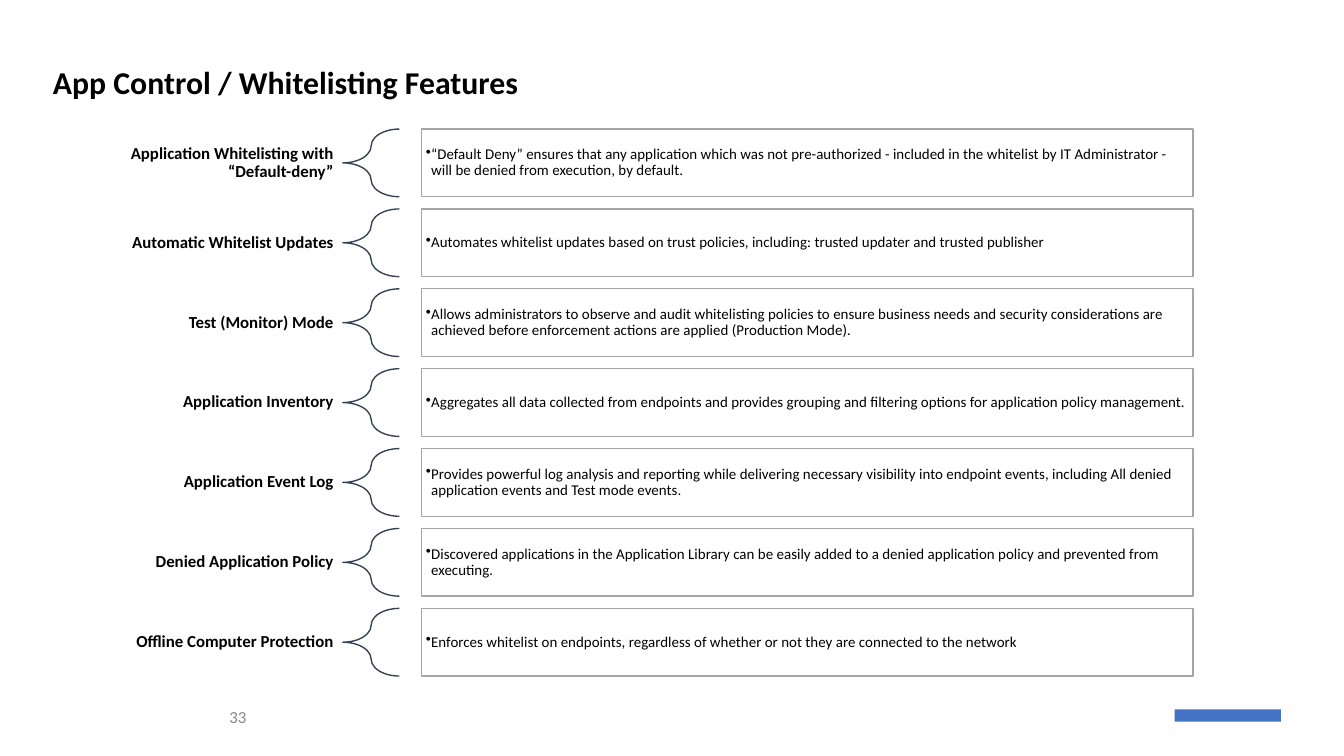
from lxml.etree import SubElement
from pptx import Presentation
from pptx.dml.color import RGBColor
from pptx.enum.shapes import MSO_SHAPE as SHAPE
from pptx.enum.text import MSO_ANCHOR as ANCHOR, MSO_AUTO_SIZE as AUTO, PP_ALIGN as ALIGN
from pptx.oxml.ns import qn
from pptx.util import Cm, Pt

BLACK = RGBColor(0x00, 0x00, 0x00)
WHITE = RGBColor(0xFF, 0xFF, 0xFF)
GRAY = RGBColor(0x88, 0x88, 0x88)
BORDER = RGBColor(0xA5, 0xA5, 0xA5)
NAVY = RGBColor(0x35, 0x42, 0x54)
BLUE = RGBColor(0x44, 0x72, 0xC4)

FEATURES = [
    ("Application Whitelisting with “Default-deny”",
     "“Default Deny” ensures that any application which was not pre-authorized - included in "
     "the whitelist by IT Administrator - will be denied from execution, by default."),
    ("Automatic Whitelist Updates",
     "Automates whitelist updates based on trust policies, including: trusted updater and "
     "trusted publisher"),
    ("Test (Monitor) Mode",
     "Allows administrators to observe and audit whitelisting policies to ensure business needs "
     "and security considerations are achieved before enforcement actions are applied "
     "(Production Mode)."),
    ("Application Inventory",
     "Aggregates all data collected from endpoints and provides grouping and filtering options "
     "for application policy management."),
    ("Application Event Log",
     "Provides powerful log analysis and reporting while delivering necessary visibility into "
     "endpoint events, including All denied application events and Test mode events."),
    ("Denied Application Policy",
     "Discovered applications in the Application Library can be easily added to a denied "
     "application policy and prevented from executing."),
    ("Offline Computer Protection",
     "Enforces whitelist on endpoints, regardless of whether or not they are connected to the "
     "network"),
]
ROW_TOP, ROW_PITCH, ROW_HEIGHT = 2.44, 1.51, 1.28


class FeatureSlide:
    """Style and current slide; positions and sizes are in centimetres."""

    font = "Calibri"
    line_width = Pt(0.75)

    def __init__(self, prs):
        self.slide = prs.slides.add_slide(prs.slide_layouts[5])
        self.shapes = self.slide.shapes

    def set_text(self, sp, text, size, color=BLACK, bold=False, align=ALIGN.LEFT,
                 inset=(0.2, 0.1), spacing=0.9, bullet=False):
        tf = sp.text_frame
        tf.word_wrap = True
        tf.auto_size = AUTO.NONE
        tf.vertical_anchor = ANCHOR.MIDDLE
        tf.margin_left = tf.margin_right = Cm(inset[0])
        tf.margin_top = tf.margin_bottom = Cm(inset[1])
        p = tf.paragraphs[0]
        p.alignment = align
        p.line_spacing = spacing
        if bullet:
            self.add_bullet(p)
        r = p.add_run()
        r.text = text
        r.font.name, r.font.size, r.font.bold = self.font, Pt(size), bold
        r.font.color.rgb = color

    def add_bullet(self, p):
        p.level = 1
        pPr = p._p.get_or_add_pPr()
        pPr.set("marL", str(Cm(0.1)))
        pPr.set("indent", str(-Cm(0.1)))
        color = SubElement(pPr, qn("a:buClr"))
        SubElement(color, qn("a:srgbClr"), val=str(BLACK))
        SubElement(pPr, qn("a:buChar"), char="•")

    def title(self, text, x, y, w, h):
        sp = self.shapes.title
        sp.left, sp.top, sp.width, sp.height = Cm(x), Cm(y), Cm(w), Cm(h)
        self.set_text(sp, text, 17, bold=True)

    def label(self, text, x, y, w, h, size=9, **style):
        sp = self.shapes.add_textbox(Cm(x), Cm(y), Cm(w), Cm(h))
        self.set_text(sp, text, size, align=ALIGN.RIGHT, **style)

    def shape(self, kind, x, y, w, h, fill=None, line=None):
        sp = self.shapes.add_shape(kind, Cm(x), Cm(y), Cm(w), Cm(h))
        sp.shadow.inherit = False
        if fill is None:
            sp.fill.background()
        else:
            sp.fill.solid()
            sp.fill.fore_color.rgb = fill
        if line is None:
            sp.line.fill.background()
        else:
            sp.line.color.rgb = line
            sp.line.width = self.line_width
        return sp

    def brace(self, x, y, w, h):
        sp = self.shape(SHAPE.LEFT_BRACE, x, y, w, h, line=NAVY)
        sp.adjustments[0] = 0.35
        sp.adjustments[1] = 0.5

    def description(self, text, x, y, w, h):
        sp = self.shape(SHAPE.RECTANGLE, x, y, w, h, fill=WHITE, line=BORDER)
        self.set_text(sp, text, 8, inset=(0.08, 0.08), bullet=True)


def main():
    prs = Presentation()
    prs.slide_width, prs.slide_height = Cm(25.4), Cm(14.29)
    s = FeatureSlide(prs)
    s.title("App Control / Whitelisting Features", 0.8, 0.8, 22.23, 1.6)
    for i, (name, text) in enumerate(FEATURES):
        y = ROW_TOP + i * ROW_PITCH
        s.label(name, 1.12, y, 5.36, ROW_HEIGHT, bold=True, inset=(0.18, 0.08))
        s.brace(6.48, y, 1.07, ROW_HEIGHT)
        s.description(text, 7.97, y, 14.58, ROW_HEIGHT)
    s.label("33", 4.06, 13.34, 0.8, 0.43, color=GRAY, spacing=1.0)
    s.shape(SHAPE.RECTANGLE, 22.2, 13.41, 2.01, 0.23, fill=BLUE)
    prs.save("out.pptx")


if __name__ == "__main__":
    main()
